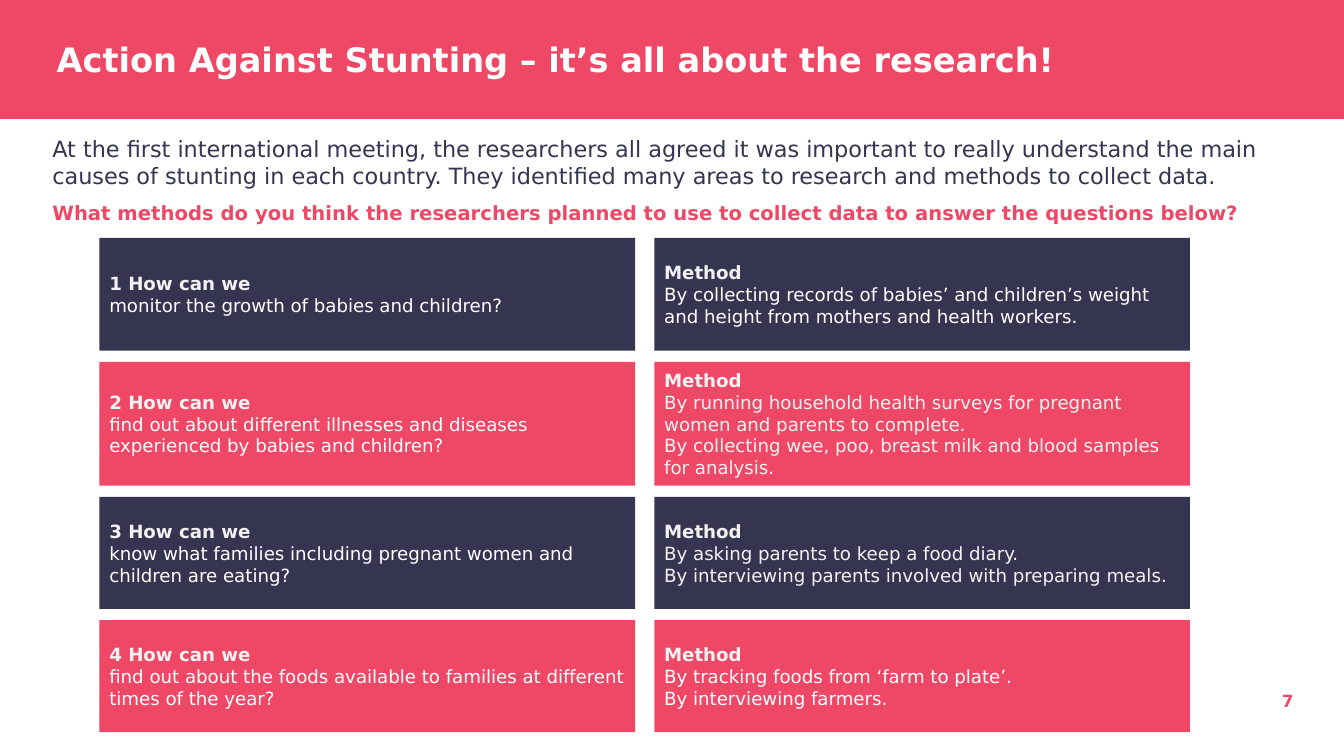
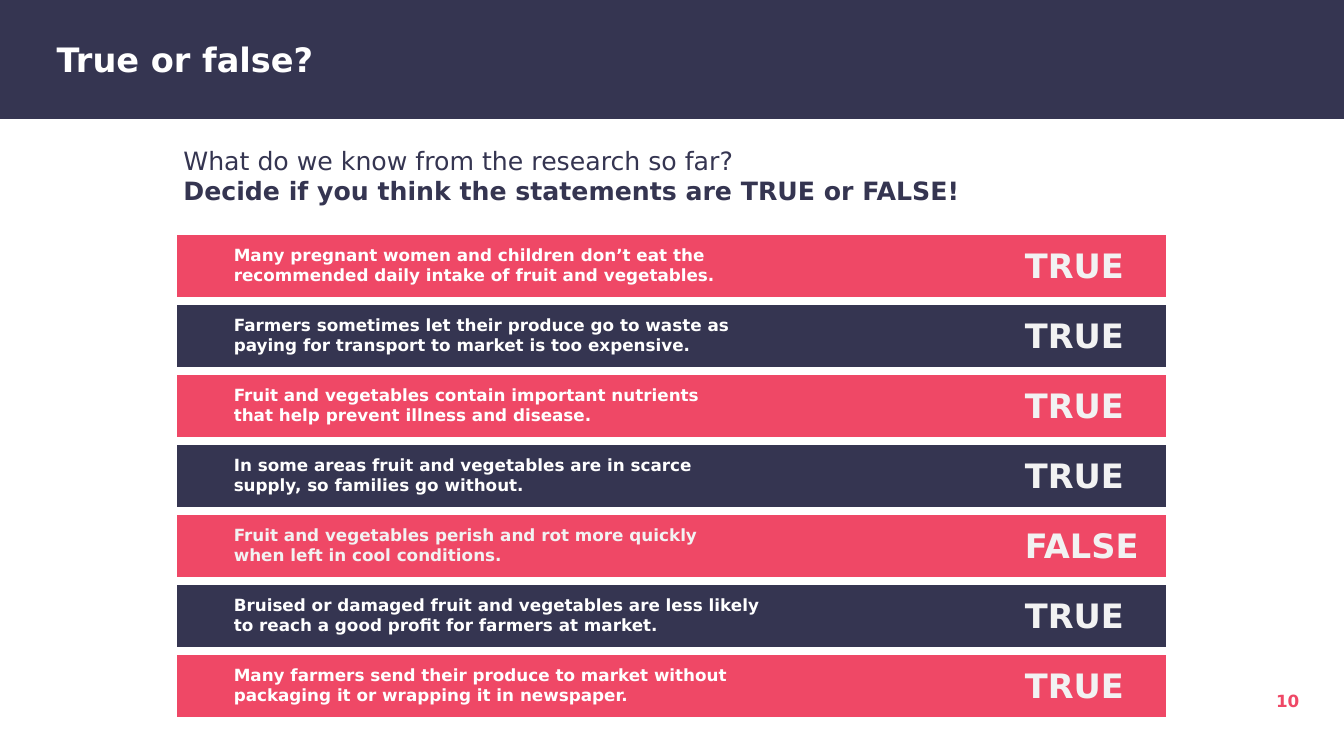
from dataclasses import dataclass
from itertools import cycle

from lxml.etree import SubElement as Sub
from pptx import Presentation
from pptx.dml.color import RGBColor as RGB
from pptx.enum.shapes import MSO_SHAPE as Shape
from pptx.enum.text import MSO_ANCHOR as Anchor, MSO_AUTO_SIZE as Fit, PP_ALIGN as Align
from pptx.oxml.ns import qn
from pptx.util import Pt


@dataclass(frozen=True)
class Theme:
    """Colours, font and type sizes of the deck."""
    pink: RGB = RGB(0xEF, 0x48, 0x66)
    navy: RGB = RGB(0x35, 0x35, 0x51)
    white: RGB = RGB(0xFF, 0xFF, 0xFF)
    light: RGB = RGB(0xF2, 0xF2, 0xF2)
    font: str = "DejaVu Sans"
    head: int = 24
    lead: int = 18
    intro: int = 16
    ask: int = 14
    card: int = 13
    small: int = 12


T = Theme()
WIDE, HIGH = 960, 540

CARDS = [
    (80.5, "monitor the growth of babies and children?",
     "By collecting records of babies’ and children’s weight and height from mothers and health workers.",
     T.white),
    (88.5, "find out about different illnesses and diseases experienced by babies and children?",
     "By running household health surveys for pregnant women and parents to complete.\n"
     "By collecting wee, poo, breast milk and blood samples for analysis.", T.light),
    (80, "know what families including pregnant women and children are eating?",
     "By asking parents to keep a food diary.\n"
     "By interviewing parents involved with preparing meals.", T.light),
    (80, "find out about the foods available to families at different times of the year?",
     "By tracking foods from ‘farm to plate’.\nBy interviewing farmers.", T.white),
]

CLAIMS = [
    ("Many pregnant women and children don’t eat the\n"
     "recommended daily intake of fruit and vegetables.", "TRUE", T.white),
    ("Farmers sometimes let their produce go to waste as\n"
     "paying for transport to market is too expensive.", "TRUE", T.white),
    ("Fruit and vegetables contain important nutrients\n"
     "that help prevent illness and disease.", "TRUE", T.white),
    ("In some areas fruit and vegetables are in scarce\n"
     "supply, so families go without.", "TRUE", T.white),
    ("Fruit and vegetables perish and rot more quickly\n"
     "when left in cool conditions.", "FALSE", T.light),
    ("Bruised or damaged fruit and vegetables are less likely\n"
     "to reach a good profit for farmers at market.", "TRUE", T.white),
    ("Many farmers send their produce to market without\n"
     "packaging it or wrapping it in newspaper.", "TRUE", T.white),
]


def ink(para, size, color, bold=False):
    """Format every run of a paragraph."""
    for run in para.runs:
        font = run.font
        font.name, font.size, font.bold = T.font, Pt(size), bold
        font.color.rgb = color


def paint(item, color):
    """Fill a shape or cell with one colour."""
    item.fill.solid()
    item.fill.fore_color.rgb = color


def place(item, box):
    """Move a shape to a box given in points."""
    item.left, item.top, item.width, item.height = map(Pt, box)


def label(slide, box, text, size, color):
    """Add a bold one-line text box and return its frame."""
    frame = slide.shapes.add_textbox(*map(Pt, box)).text_frame
    frame.word_wrap = True
    frame.text = text
    ink(frame.paragraphs[0], size, color, True)
    return frame


def banner(slide, box, text, color):
    """Turn the title into a coloured band."""
    title = slide.shapes.title
    place(title, box)
    paint(title, color)
    frame = title.text_frame
    frame.text = text
    frame.auto_size = Fit.NONE
    frame.vertical_anchor = Anchor.MIDDLE
    frame.margin_left = Pt(40.5)
    frame.paragraphs[0].alignment = Align.LEFT
    ink(frame.paragraphs[0], T.head, T.white, True)


def intro(slide, box, lines):
    """Set the lead text from lines of text, size, colour, bold and spacing."""
    body = slide.placeholders[1]
    place(body, box)
    frame = body.text_frame
    frame.text = "\n".join(line[0] for line in lines)
    frame.auto_size = Fit.NONE
    for para, (_, size, color, bold, gap) in zip(frame.paragraphs, lines):
        props = para._p.get_or_add_pPr()
        props.set("marL", "0")
        props.set("indent", "0")
        Sub(props, qn("a:buNone"))
        para.space_before = Pt(0)
        para.line_spacing = gap
        ink(para, size, color, bold)


def page(deck, title, color, num, box, lines):
    """Add a slide with its band, lead text and page number."""
    slide = deck.slides.add_slide(deck.slide_layouts[1])
    banner(slide, (0, 0, WIDE, 85), title, color)
    intro(slide, box, lines)
    frame = label(slide, (900, 486, 39.6, 28.8), num, T.small, T.pink)
    frame.vertical_anchor = Anchor.MIDDLE
    frame.paragraphs[0].alignment = Align.CENTER
    return slide


def card(slide, box, head, text, fill, color):
    """Draw a filled card with a bold heading and text."""
    tile = slide.shapes.add_shape(Shape.RECTANGLE, *map(Pt, box))
    tile.shadow.inherit = False
    tile.line.fill.background()
    paint(tile, fill)
    frame = tile.text_frame
    frame.text = f"{head}\n{text}"
    frame.vertical_anchor = Anchor.MIDDLE
    for spot, para in enumerate(frame.paragraphs):
        para.alignment = Align.LEFT
        ink(para, T.card, color if spot else T.light, spot == 0)


def cards(slide, box):
    """Lay out question and method cards in two columns."""
    left, top, wide = box
    gap, gutter = 8, 13.7
    span = (wide - gutter) / 2
    fills = cycle((T.navy, T.pink))
    for num, (high, ask, way, color) in enumerate(CARDS, 1):
        fill = next(fills)
        card(slide, (left, top, span, high), f"{num} How can we", ask, fill, T.white)
        card(slide, (left + span + gutter, top, span, high), "Method", way, fill, color)
        top += high + gap


def edge(cell, color, width):
    """Draw all four borders of a cell."""
    props = cell._tc.get_or_add_tcPr()
    for side in ("lnL", "lnR", "lnT", "lnB"):
        line = Sub(props, qn(f"a:{side}"), w=str(Pt(width)))
        Sub(Sub(line, qn("a:solidFill")), qn("a:srgbClr"), val=str(color))


def claims(slide, box):
    """Build the table of statements with a verdict on each row."""
    left, top, wide, high = box
    step = high / len(CLAIMS)
    grid = slide.shapes.add_table(len(CLAIMS), 1, *map(Pt, box)).table
    grid.first_row = grid.horz_banding = False
    fills = cycle((T.pink, T.navy))
    for spot, (text, word, color) in enumerate(CLAIMS):
        grid.rows[spot].height = Pt(step)
        cell = grid.cell(spot, 0)
        edge(cell, T.white, 6)
        paint(cell, next(fills))
        cell.vertical_anchor = Anchor.MIDDLE
        cell.margin_left = Pt(43.2)
        cell.text_frame.text = text
        for para in cell.text_frame.paragraphs:
            ink(para, T.small, color, True)
        label(slide, (left + 601.2, top + spot * step + 6.5, 106, 36), word, T.head, T.light)


def main():
    """Build and save the deck."""
    deck = Presentation()
    deck.slide_width, deck.slide_height = Pt(WIDE), Pt(HIGH)
    study = page(
        deck, "Action Against Stunting – it’s all about the research!", T.pink, "7",
        (30.2, 93, 899.3, 68.4),
        [("At the first international meeting, the researchers all agreed it was important to really "
          "understand the main causes of stunting in each country. They identified many areas to "
          "research and methods to collect data.", T.intro, T.navy, False, 1.0),
         ("What methods do you think the researchers planned to use to collect data to answer "
          "the questions below?", T.ask, T.pink, True, 1.5)])
    cards(study, (71, 170, 779))
    quiz = page(
        deck, "True or false?", T.navy, "10", (123.8, 100, 836, 51),
        [("What do we know from the research so far?", T.lead, T.navy, False, 1.0),
         ("Decide if you think the statements are TRUE or FALSE!", T.lead, T.navy, True, 1.0)])
    claims(quiz, (123.8, 165, 712, 350))
    deck.save("out.pptx")


if __name__ == "__main__":
    main()
